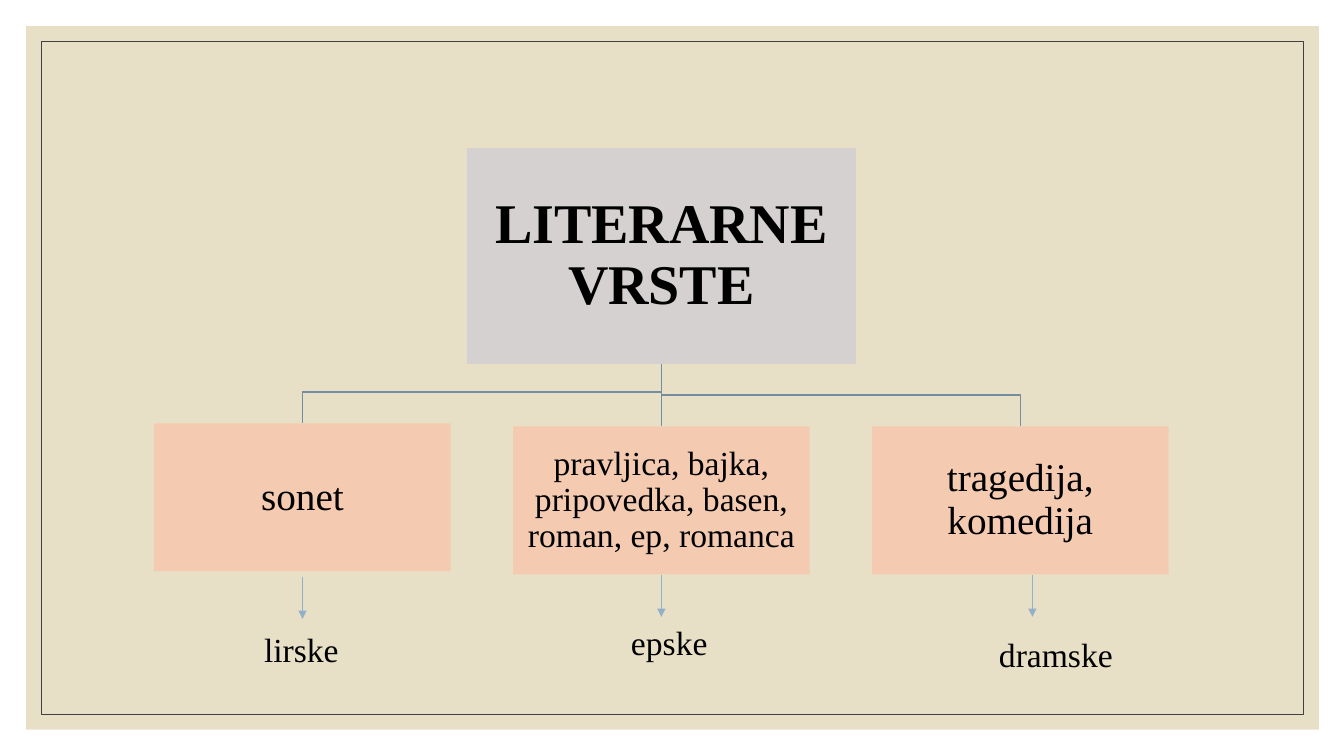
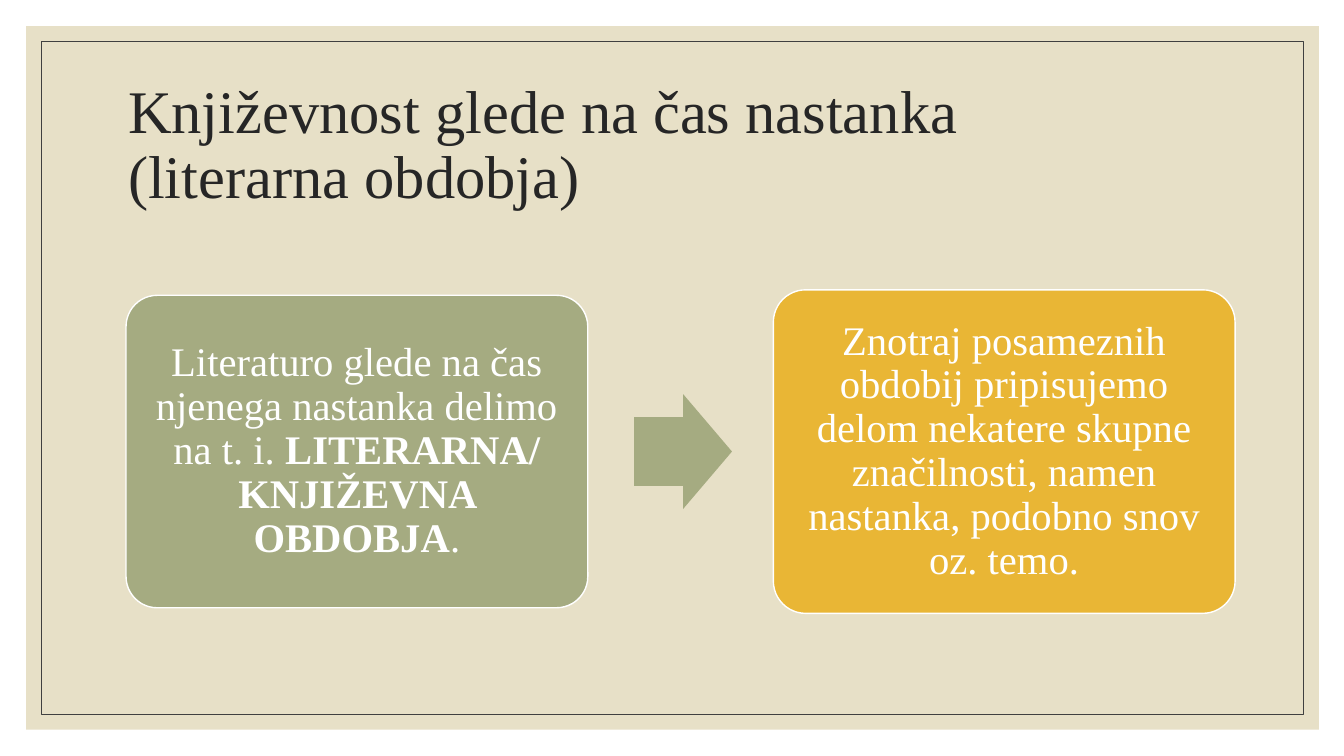
from dataclasses import dataclass

from lxml import etree
from pptx import Presentation
from pptx.dml.color import RGBColor
from pptx.enum.shapes import MSO_CONNECTOR, MSO_SHAPE
from pptx.enum.text import MSO_ANCHOR, MSO_AUTO_SIZE, PP_ALIGN
from pptx.oxml.ns import qn
from pptx.util import Inches, Pt

RECTANGLE = MSO_SHAPE.RECTANGLE
ROUNDED = MSO_SHAPE.ROUNDED_RECTANGLE
RIGHT_ARROW = MSO_SHAPE.RIGHT_ARROW
STRAIGHT = MSO_CONNECTOR.STRAIGHT
MIDDLE = MSO_ANCHOR.MIDDLE
TOP = MSO_ANCHOR.TOP
LEFT = PP_ALIGN.LEFT
CENTER = PP_ALIGN.CENTER
NO_FIT = MSO_AUTO_SIZE.NONE
GROW = MSO_AUTO_SIZE.SHAPE_TO_FIT_TEXT


@dataclass(frozen=True)
class Theme:
    font: str = "Times New Roman"
    panel: str = "E7E0C7"
    frame: str = "404040"
    title: str = "262626"
    black: str = "000000"
    white: str = "FFFFFF"
    root: str = "D5D1D1"
    genre: str = "F4CBB1"
    branch: str = "758DA0"
    arrow: str = "92B0C8"
    green: str = "A5AB81"
    gold: str = "E9B635"
    title_size: float = 43.2
    root_size: int = 40
    card_size: int = 29
    genre_size: int = 28
    small_size: int = 24


theme = Theme()


def style(shape, fill=None, line=None, width=1):
    shape.shadow.inherit = False
    if fill:
        shape.fill.solid()
        shape.fill.fore_color.rgb = RGBColor.from_string(fill)
    else:
        shape.fill.background()
    if line:
        shape.line.color.rgb = RGBColor.from_string(line)
        shape.line.width = Pt(width)
    else:
        shape.line.fill.background()


def write(shape, lines, size, color, align=CENTER, anchor=MIDDLE, inset=None, spacing=0.9):
    frame = shape.text_frame
    frame.word_wrap = True
    frame.vertical_anchor = anchor
    if inset is not None:
        frame.margin_left = frame.margin_right = Inches(inset)
        frame.margin_top = frame.margin_bottom = Inches(inset)
    para = frame.paragraphs[0]
    para.alignment = align
    para.line_spacing = spacing
    for index, line in enumerate(lines):
        if index:
            para.add_line_break()
        for text, bold in line:
            span = para.add_run()
            span.text = text
            span.font.name = theme.font
            span.font.size = Pt(size)
            span.font.bold = bold
            span.font.color.rgb = RGBColor.from_string(color)


deck = Presentation()
deck.slide_width = Inches(13.33)
deck.slide_height = Inches(7.5)

page = deck.slides.add_slide(deck.slide_layouts[6])
master_tree = deck.slide_master.shapes.element
backdrop = [(0.26, 12.82, 6.98, theme.panel, None), (0.41, 12.52, 6.68, None, theme.frame)]
for index, (margin, width, height, fill, line) in enumerate(backdrop):
    band = page.shapes.add_shape(
        RECTANGLE, Inches(margin), Inches(margin), Inches(width), Inches(height))
    style(band, fill, line, 0.5)
    band.element.nvSpPr.cNvPr.set("id", str(100 + index))
    master_tree.insert(2 + index, band.element)

center_x, column_step = 6.56, 3.56
root_top, root_width, root_height = 1.47, 3.86, 2.14
genre_width, genre_height = 2.94, 1.47
root_bottom = root_top + root_height
branch_rise = 0.31

root = page.shapes.add_shape(
    RECTANGLE, Inches(center_x - root_width / 2), Inches(root_top),
    Inches(root_width), Inches(root_height))
style(root, theme.root)
write(root, [[("LITERARNE VRSTE", True)]], theme.root_size, theme.black, inset=0.03)

genres = [
    ("sonet", theme.genre_size, 4.2, "lirske", 2.52, 6.19, 1.19, 3, 5.72),
    ("pravljica, bajka, pripovedka, basen, roman, ep, romanca", theme.small_size, 4.23,
     "epske", 6.16, 6.12, 1.19, 6.56, 5.7),
    ("tragedija, komedija", theme.genre_size, 4.23, "dramske", 9.81, 6.24, 1.4, 10.24, 5.7),
]
connectors = []
for column, (works, size, top, kind, kind_left, kind_top, kind_width,
             arrow_x, arrow_top) in enumerate(genres):
    genre_x = center_x + (column - 1) * column_step
    genre = page.shapes.add_shape(
        RECTANGLE, Inches(genre_x - genre_width / 2), Inches(top),
        Inches(genre_width), Inches(genre_height))
    style(genre, theme.genre)
    write(genre, [[(works, False)]], size, theme.black, inset=0.02)

    arrow = page.shapes.add_connector(
        STRAIGHT, Inches(arrow_x), Inches(arrow_top), Inches(arrow_x), Inches(arrow_top + 0.42))
    connectors.append((arrow, theme.arrow, 0.5, True))

    if genre_x == center_x:
        arrow.begin_connect(genre, 2)
        trunk = page.shapes.add_connector(
            STRAIGHT, Inches(center_x), Inches(root_bottom), Inches(center_x), Inches(top))
        trunk.begin_connect(root, 2)
        trunk.end_connect(genre, 0)
        connectors.append((trunk, theme.branch, 1, False))
    else:
        bend = Inches(top - branch_rise)
        outline = page.shapes.build_freeform(Inches(center_x), Inches(root_bottom))
        outline.add_line_segments(
            [(Inches(center_x), bend), (Inches(genre_x), bend), (Inches(genre_x), Inches(top))],
            close=False)
        style(outline.convert_to_shape(), line=theme.branch)

    label = page.shapes.add_textbox(
        Inches(kind_left), Inches(kind_top), Inches(kind_width), Inches(0.5))
    write(label, [[(kind, False)]], theme.small_size, theme.black, LEFT, TOP, spacing=1.0)
    label.text_frame.auto_size = GROW

for connector, color, width, pointed in connectors:
    connector.line.color.rgb = RGBColor.from_string(color)
    connector.line.width = Pt(width)
    properties = connector.element.spPr
    if pointed:
        etree.SubElement(properties.find(qn("a:ln")), qn("a:tailEnd"), type="triangle")
    etree.SubElement(properties, qn("a:effectLst"))

page = deck.slides.add_slide(deck.slide_layouts[5])
title = page.shapes.title
title.left, title.top = Inches(1.17), Inches(0.7)
title.width, title.height = Inches(11), Inches(1.5)
title.text_frame.auto_size = NO_FIT
write(title, [[("Književnost glede na čas nastanka", False)], [("(literarna obdobja)", False)]],
      theme.title_size, theme.title, LEFT)

cards = [
    (1.25, 3.1, theme.green,
     [("Literaturo glede na čas njenega nastanka delimo na t. i. ", False),
      ("LITERARNA/ KNJIŽEVNA OBDOBJA", True), (".", False)]),
    (7.67, 3.21, theme.gold,
     [("Znotraj posameznih obdobij pripisujemo delom nekatere skupne značilnosti, "
       "namen nastanka, podobno snov oz. temo.", False)]),
]
middle_y = 4.48
for left, height, fill, spans in cards:
    card = page.shapes.add_shape(
        ROUNDED, Inches(left), Inches(middle_y - height / 2), Inches(4.58), Inches(height))
    card.adjustments[0] = 0.1
    style(card, fill, theme.white)
    write(card, [spans], theme.card_size, theme.white, inset=0.12)

step_arrow = page.shapes.add_shape(
    RIGHT_ARROW, Inches(6.29), Inches(middle_y - 0.57), Inches(0.97), Inches(1.14))
step_arrow.adjustments[0] = 0.6
step_arrow.adjustments[1] = 0.5
style(step_arrow, theme.green)

deck.save("out.pptx")
